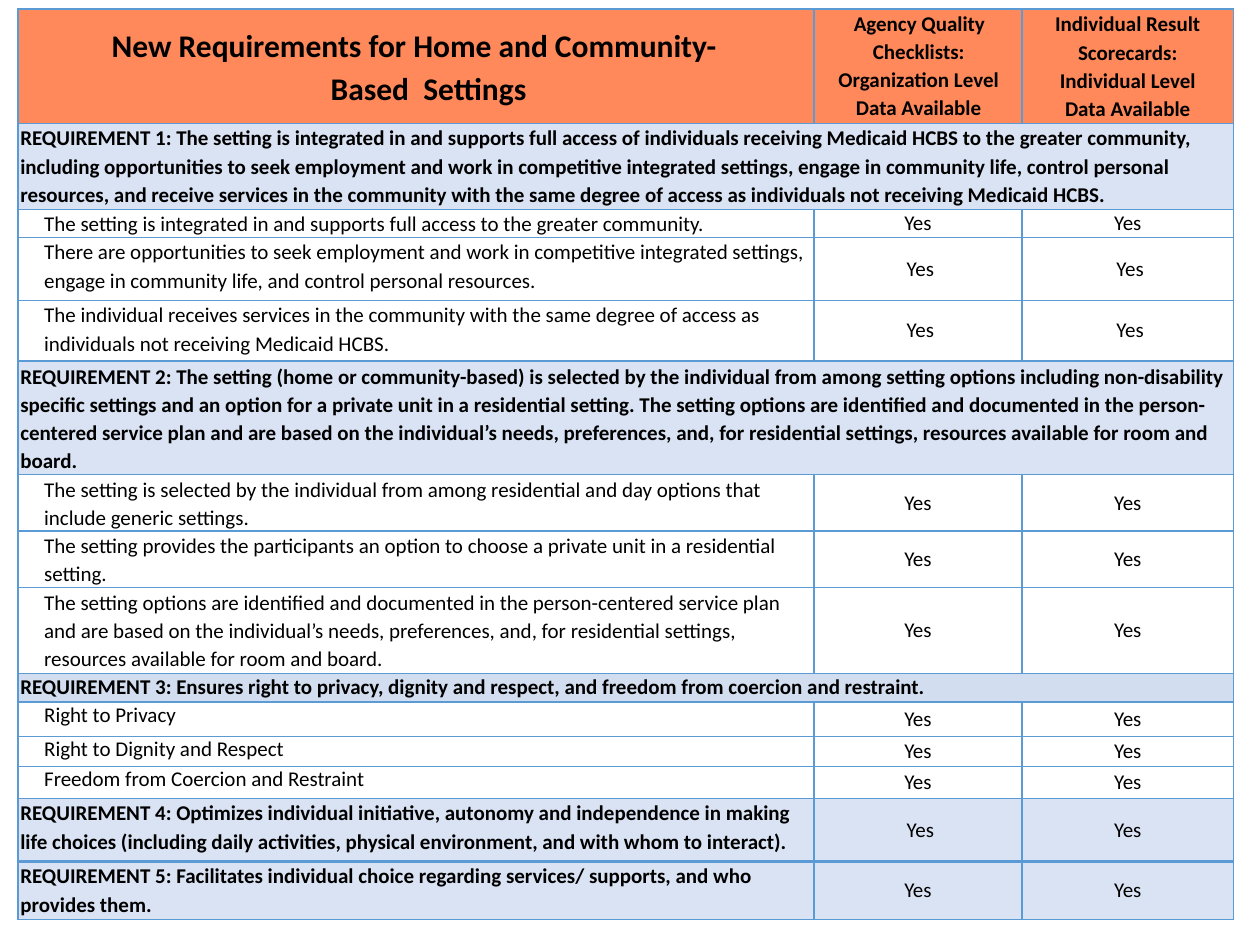
"""Build a one-slide table of requirements for home and community-based settings."""
from dataclasses import dataclass

import pptx
import pptx.dml.color
import pptx.enum.text
import pptx.oxml
import pptx.oxml.ns
import pptx.util

Cm, Pt = pptx.util.Cm, pptx.util.Pt
ALIGN, ANCHOR = pptx.enum.text.PP_ALIGN, pptx.enum.text.MSO_ANCHOR
HEAD, PALE, MID, EDGE = "FF895A", "DAE3F3", "D2DEEF", "5B9BD5"
COLS = (16.05, 4.19, 4.27)
HEAD_ROW = 2.31


@dataclass
class Para:
    text: str
    left: float = 0
    right: float = 0
    first: float = 0
    size: int = 12
    bold: bool = False
    align: ALIGN = ALIGN.CENTER
    space: float = 1.1
    lead: float = 0.8


@dataclass
class Row:
    high: float
    text: str
    marks: tuple = ("Yes", "Yes")
    fill: str = ""
    space: float = 1.1
    mid: bool = False


HEADS = (
    [Para("New Requirements for Home and Community-Based  Settings",
          1.88, 1.37, -0.58, 18, True, space=1.12, lead=13.2)],
    [Para("Agency Quality Checklists: Organization Level Data Available",
          0.23, 0.2, 0.03, bold=True)],
    [Para("Individual Result Scorecards:", 0.05, 0.05, bold=True, space=1.11),
     Para("Individual Level Data Available", 0.61, 0.61, bold=True, lead=0)],
)
ROWS = (
    Row(1.73, "REQUIREMENT 1: The setting is integrated in and supports full access of "
        "individuals receiving Medicaid HCBS to the greater community, including "
        "opportunities to seek employment and work in competitive integrated settings, "
        "engage in community life, control personal resources, and receive services in "
        "the community with the same degree of access as individuals not receiving "
        "Medicaid HCBS.", (), PALE),
    Row(0.56, "The setting is integrated in and supports full access to the greater "
        "community."),
    Row(1.27, "There are opportunities to seek employment and work in competitive "
        "integrated settings, engage in community life, and control personal resources.",
        (" Yes", " Yes")),
    Row(1.22, "The individual receives services in the community with the same degree of "
        "access as individuals not receiving Medicaid HCBS.", (" Yes", " Yes")),
    Row(2.29, "REQUIREMENT 2: The setting (home or community-based) is selected by the "
        "individual from among setting options including non-disability specific settings "
        "and an option for a private unit in a residential setting. The setting options "
        "are identified and documented in the person-centered service plan and are based "
        "on the individual’s needs, preferences, and, for residential settings, resources "
        "available for room and board.", (), PALE, mid=True),
    Row(1.14, "The setting is selected by the individual from among residential and day "
        "options that include generic settings."),
    Row(1.14, "The setting provides the participants an option to choose a private unit "
        "in a residential setting."),
    Row(1.73, "The setting options are identified and documented in the person-centered "
        "service plan and are based on the individual’s needs, preferences, and, for "
        "residential settings, resources available for room and board."),
    Row(0.58, "REQUIREMENT 3: Ensures right to privacy, dignity and respect, and freedom "
        "from coercion and restraint.", (), MID, 1, True),
    Row(0.69, "Right to Privacy", space=1),
    Row(0.61, "Right to Dignity and Respect", space=1),
    Row(0.64, "Freedom from Coercion and Restraint", space=1),
    Row(1.27, "REQUIREMENT 4: Optimizes individual initiative, autonomy and independence "
        "in making life choices (including daily activities, physical environment, and "
        "with whom to interact).", (" Yes", "Yes"), PALE),
    Row(1.17, "REQUIREMENT 5: Facilitates individual choice regarding services/ supports, "
        "and who provides them.", fill=PALE),
)


def tint(code: str) -> pptx.dml.color.RGBColor:
    """Turn a hex string into a colour."""
    return pptx.dml.color.RGBColor.from_string(code)


def border(cell, top: float = 1, base: float = 1) -> None:
    """Draw the four edges of a cell."""
    for side, wide in zip("LRTB", (1, 1, top, base)):
        cell._tc.get_or_add_tcPr().append(pptx.oxml.parse_xml(
            f'<a:ln{side} {pptx.oxml.ns.nsdecls("a")} w="{Pt(wide)}"><a:solidFill>'
            f'<a:srgbClr val="{EDGE}"/></a:solidFill></a:ln{side}>'))


def write(cell, paras: list[Para], fill: str = "", mid: bool = True) -> None:
    """Fill a cell and set its paragraphs."""
    cell.margin_left = cell.margin_right = cell.margin_top = cell.margin_bottom = 0
    cell.vertical_anchor = ANCHOR.MIDDLE if mid else ANCHOR.TOP
    if fill:
        cell.fill.solid()
        cell.fill.fore_color.rgb = tint(fill)
    else:
        cell.fill.background()
    frame = cell.text_frame
    frame.text = "\n".join(para.text for para in paras)
    for line, para in zip(frame.paragraphs, paras):
        line.alignment, line.line_spacing = para.align, para.space
        line.space_before = Pt(para.lead)
        props = line._p.get_or_add_pPr()
        for name, size in (("marL", para.left), ("marR", para.right),
                           ("indent", para.first)):
            props.set(name, str(Cm(size)))
        for run in line.runs:
            font = run.font
            font.name, font.size, font.bold = "Calibri", Pt(para.size), para.bold
            font.color.rgb = tint("000000")


def draw(table, num: int, row: Row) -> None:
    """Draw one body row, spanning it when it has no marks."""
    last = len(ROWS)
    cells = list(table.rows[num].cells)
    for cell in cells:
        border(cell, 2 if num == last else 1, 2 if num == last - 1 else 1)
    if not row.marks:
        cells[0].merge(cells[-1])
    label = Para(row.text, 0.05 if row.fill else 0.53, 0.13, bold=bool(row.fill),
                 align=ALIGN.LEFT, space=row.space)
    write(cells[0], [label], row.fill, row.mid)
    for cell, mark in zip(cells[1:], row.marks):
        write(cell, [Para(mark, space=1)], row.fill)


def main() -> None:
    """Build and save the slide."""
    deck = pptx.Presentation()
    deck.slide_width, deck.slide_height = Cm(25.4), Cm(19.05)
    slide = deck.slides.add_slide(deck.slide_layouts[6])
    highs = [HEAD_ROW] + [row.high for row in ROWS]
    table = slide.shapes.add_table(len(highs), len(COLS), Cm(0.36), Cm(0.18),
                                   Cm(sum(COLS)), Cm(sum(highs))).table
    table.first_row = table.horz_banding = False
    for col, wide in zip(table.columns, COLS):
        col.width = Cm(wide)
    for line, high in zip(table.rows, highs):
        line.height = Cm(high)
    for num, paras in enumerate(HEADS):
        cell = table.cell(0, num)
        border(cell)
        write(cell, paras, HEAD, num == 0)
    for num, row in enumerate(ROWS, 1):
        draw(table, num, row)
    deck.save("out.pptx")


if __name__ == "__main__":
    main()
